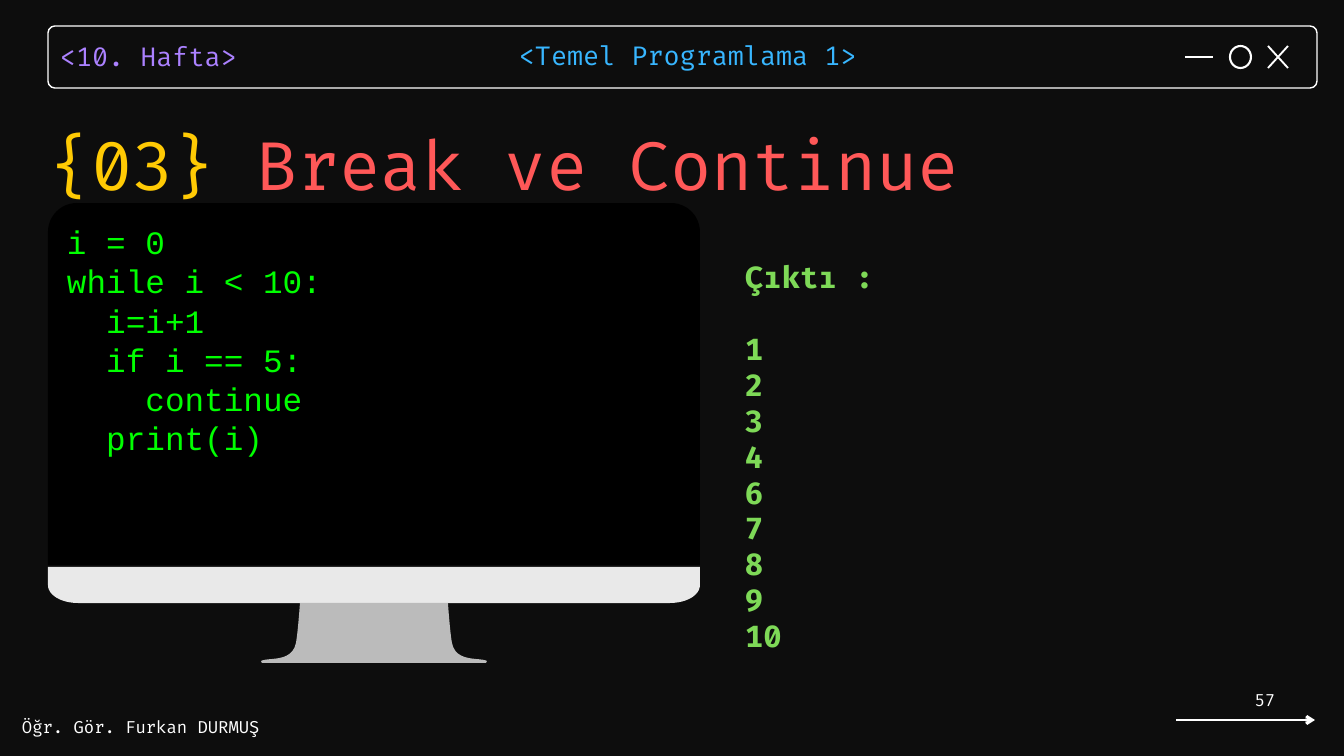
from lxml import etree
from pptx import Presentation
from pptx import util as u
from pptx.dml.color import RGBColor
from pptx.enum import shapes, text
from pptx.oxml import ns

PX = 914400 / 67.2
CODE_FONT = "Courier New"
MAIN_FONT = "Fira Code"
WHITE = "FFFFFF"
BLACK = "000000"
MONITOR_MIDDLE = 374

CODE = ["i = 0", "while i < 10:", "  i=i+1", "  if i == 5:", "    continue", "  print(i)"]
OUTPUT = [str(number) for number in range(1, 11) if number != 5]


def px(value):
    return u.Emu(round(value * PX))


def color(hex_string):
    return RGBColor.from_string(hex_string)


def style(shape, fill=None, line=None, width=1):
    shape.shadow.inherit = False
    if fill:
        shape.fill.solid()
        shape.fill.fore_color.rgb = color(fill)
    else:
        shape.fill.background()
    if line:
        shape.line.color.rgb = color(line)
        shape.line.width = u.Pt(width)
    else:
        shape.line.fill.background()


def add_shape(slide, kind, box, adjustments=(), **look):
    shape = slide.shapes.add_shape(kind, *map(px, box))
    for index, value in enumerate(adjustments):
        shape.adjustments[index] = value
    style(shape, **look)


def add_line(slide, start, end, width, arrow=False):
    connector = slide.shapes.add_connector(
        shapes.MSO_CONNECTOR.STRAIGHT, *map(px, (*start, *end)))
    connector.line.color.rgb = color(WHITE)
    connector.line.width = u.Pt(width)
    if arrow:
        line = connector.line._get_or_add_ln()
        etree.SubElement(line, ns.qn("a:tailEnd"), type="arrow")
    etree.SubElement(connector._element.spPr, ns.qn("a:effectLst"))


def curve(start, control_1, control_2, end, steps=12):
    """Points along a cubic curve, both ends included."""
    points = []
    for step in range(steps + 1):
        t = step / steps
        weights = ((1 - t) ** 3, 3 * t * (1 - t) ** 2, 3 * t * t * (1 - t), t ** 3)
        corners = (start, control_1, control_2, end)
        points.append(tuple(sum(w * c[axis] for w, c in zip(weights, corners))
                            for axis in (0, 1)))
    return points


def add_symmetric_outline(slide, left_half, fill):
    """Close an outline by mirroring its left half about the monitor's middle."""
    right_half = [(2 * MONITOR_MIDDLE - x, y) for x, y in reversed(left_half)]
    points = [(px(x), px(y)) for x, y in left_half + right_half]
    builder = slide.shapes.build_freeform(*points[0], scale=1.0)
    builder.add_line_segments(points[1:], close=True)
    style(builder.convert_to_shape(), fill=fill)


def add_text(slide, box, paragraphs, size, font=MAIN_FONT, bold=False, inset=True,
             anchor=text.MSO_ANCHOR.TOP, **spacing):
    """Each paragraph is a list of (words, colour) runs."""
    frame = slide.shapes.add_textbox(*map(px, box)).text_frame
    frame.word_wrap = True
    frame.vertical_anchor = anchor
    if not inset:
        frame.auto_size = text.MSO_AUTO_SIZE.SHAPE_TO_FIT_TEXT
        for side in ("left", "top", "right", "bottom"):
            setattr(frame, f"margin_{side}", 0)
    for index, runs in enumerate(paragraphs):
        paragraph = frame.add_paragraph() if index else frame.paragraphs[0]
        for name, value in spacing.items():
            setattr(paragraph, name, value)
        for words, hex_string in runs:
            run = paragraph.add_run()
            run.text = words
            run.font.color.rgb = color(hex_string)
            for name, value in {"name": font, "size": u.Pt(size), "bold": bold}.items():
                setattr(run.font, name, value)
    return frame


def add_title_bar(slide):
    add_shape(slide, shapes.MSO_SHAPE.ROUNDED_RECTANGLE, (48, 26, 1269, 62), [0.11],
              line=WHITE, width=1.5)
    add_line(slide, (1268, 46), (1288, 68), 2)
    add_line(slide, (1288, 46), (1268, 68), 2)
    add_line(slide, (1185, 57), (1213, 57), 2)
    add_shape(slide, shapes.MSO_SHAPE.OVAL, (1230, 46, 21, 22), line=WHITE, width=2.25)
    add_text(slide, (60, 35, 228, 36), [[("<10. Hafta>", "AB81FF")]], 28,
             inset=False, line_spacing=u.Pt(39.2))
    add_text(slide, (519, 34, 356, 36), [[("<Temel Programlama 1>", "38B6FF")]], 28,
             inset=False, line_spacing=u.Pt(39.2))


def add_monitor(slide):
    add_shape(slide, shapes.MSO_SHAPE.ROUND_2_SAME_RECTANGLE, (48, 203, 652, 362),
              [0.08, 0], fill=BLACK)
    chin = [(48, 567)] + curve((48, 585), (48, 595), (61, 603), (78, 603))
    add_symmetric_outline(slide, chin, "E9E9E9")
    stand = (curve((300, 603), (300, 603), (298, 632), (296, 643))
             + curve((296, 643), (292, 663), (268, 657), (261, 661))[1:]
             + [(262, 663)])
    add_symmetric_outline(slide, stand, "BBBBBB")
    add_shape(slide, shapes.MSO_SHAPE.RECTANGLE, (77, 223, 599, 334),
              fill=BLACK, line=BLACK, width=2)
    add_text(slide, (67, 222, 616, 237), [[(line, "00FF00")] for line in CODE], 35,
             font=CODE_FONT, inset=False)


def add_output(slide):
    lines = ["Çıktı :"] + OUTPUT
    frame = add_text(slide, (745, 259, 470, 398), [[(line, "7ED957")] for line in lines],
                     32, bold=True, inset=False, alignment=text.PP_ALIGN.JUSTIFY)
    frame.paragraphs[1].space_before = u.Pt(38.5)


def add_footer(slide):
    add_line(slide, (1176, 720), (1315, 720), 3, arrow=True)
    add_text(slide, (22, 717, 247, 20), [[("Öğr. Gör. Furkan DURMUŞ", WHITE)]], 18,
             inset=False)
    add_text(slide, (1126, 686, 156, 27), [[("57", WHITE)]], 18,
             anchor=text.MSO_ANCHOR.MIDDLE, alignment=text.PP_ALIGN.RIGHT)


def main():
    presentation = Presentation()
    presentation.slide_width = px(1344)
    presentation.slide_height = px(756)
    slide = presentation.slides.add_slide(presentation.slide_layouts[6])
    slide.background.fill.solid()
    slide.background.fill.fore_color.rgb = color("0D0D0D")

    add_title_bar(slide)
    add_text(slide, (50, 108, 1294, 93),
             [[("{03} ", "FFCA04"), ("Break ve Continue", "FF5858")]], 72,
             inset=False, line_spacing=u.Pt(102.6))
    add_monitor(slide)
    add_output(slide)
    add_footer(slide)
    presentation.save("out.pptx")


if __name__ == "__main__":
    main()
